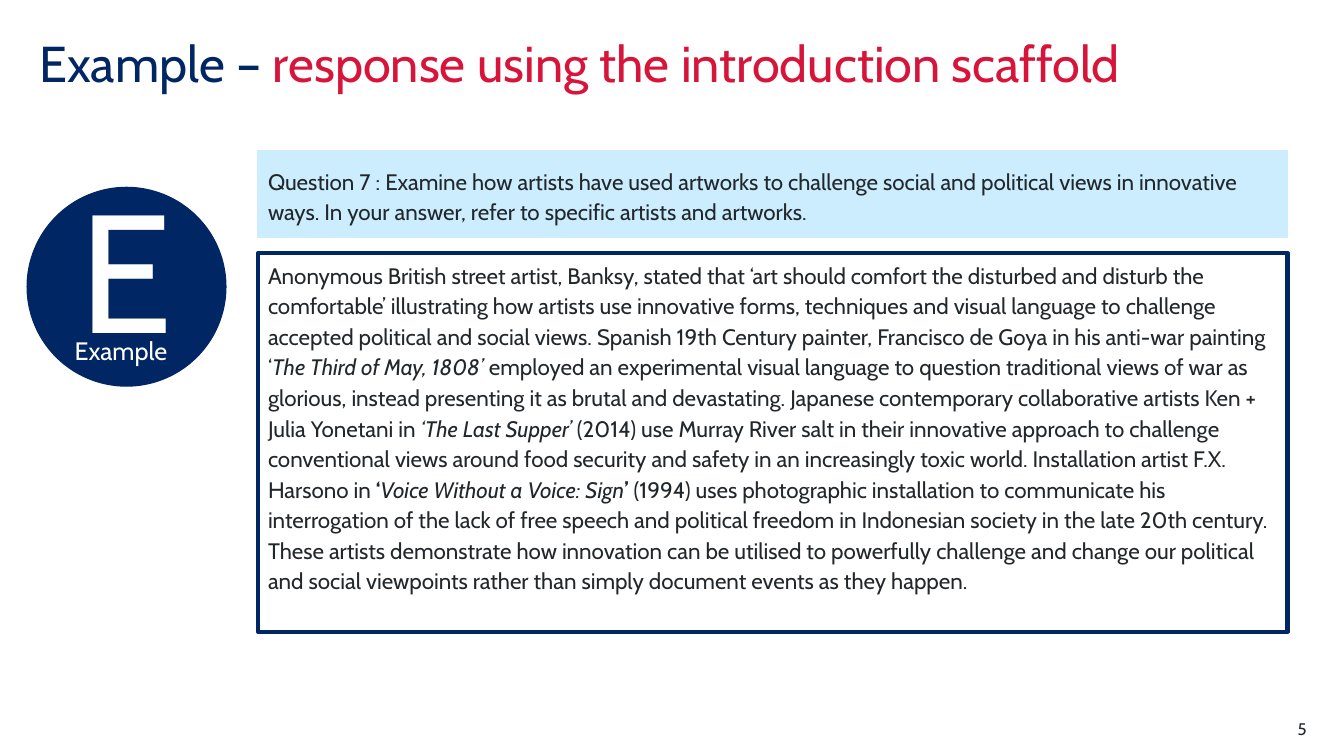
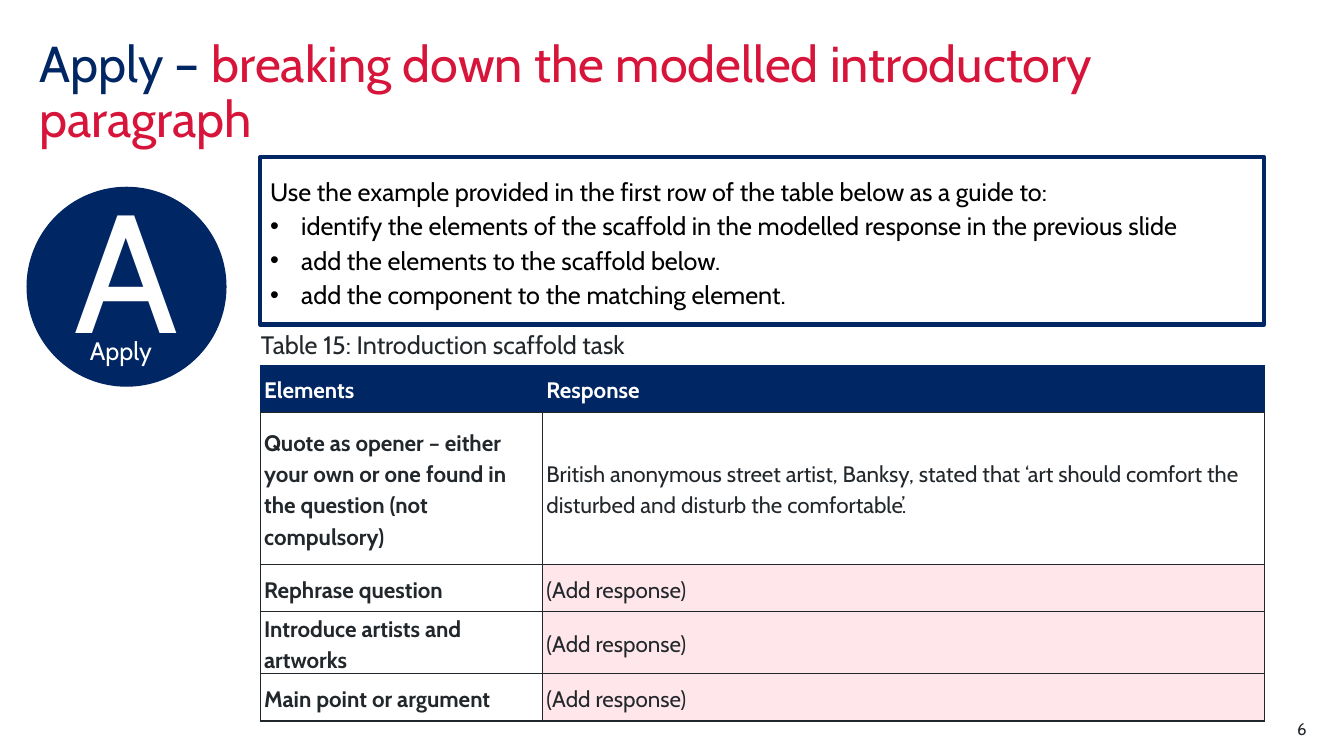
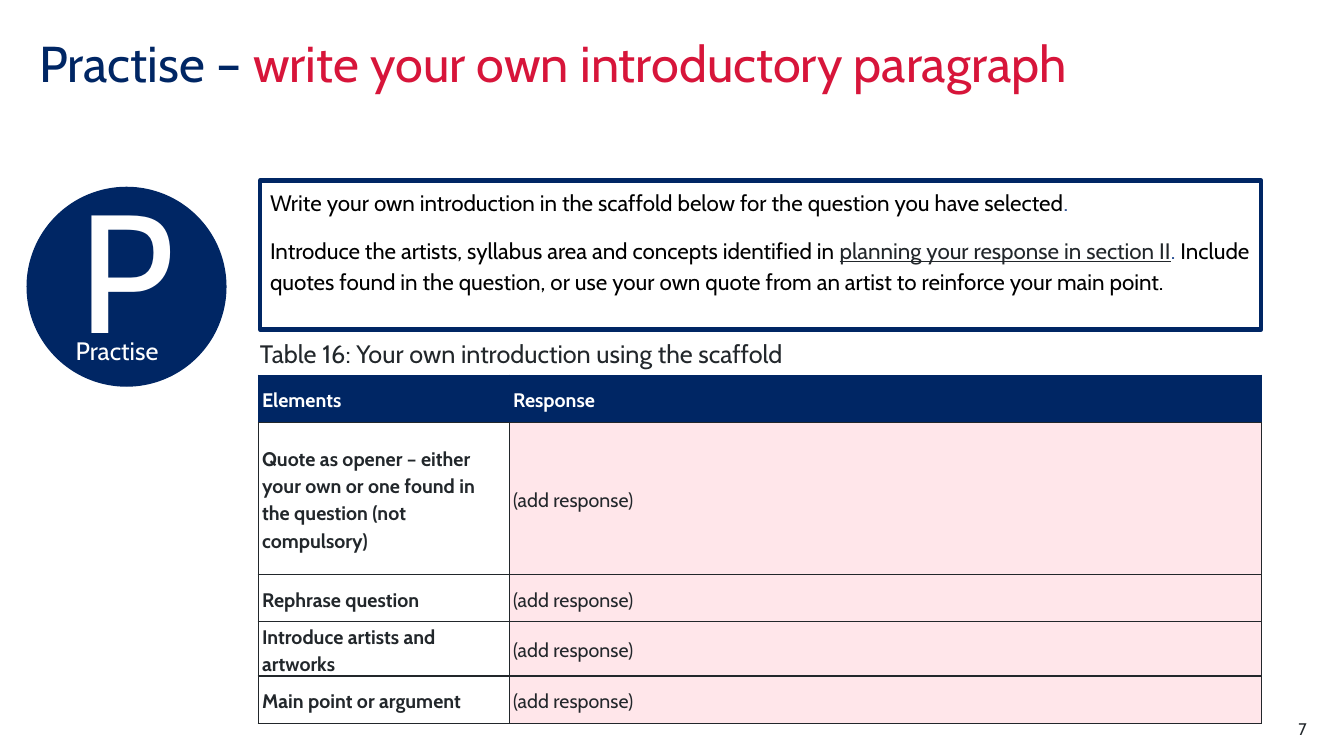
from typing import NamedTuple

from lxml import etree
from pptx import Presentation
from pptx.dml.color import RGBColor
from pptx.enum.shapes import MSO_SHAPE
from pptx.enum.text import MSO_ANCHOR, PP_ALIGN
from pptx.oxml.ns import qn
from pptx.util import Inches, Pt

OVAL, RECT = MSO_SHAPE.OVAL, MSO_SHAPE.RECTANGLE
TOP, MIDDLE = MSO_ANCHOR.TOP, MSO_ANCHOR.MIDDLE
LEFT, CENTER, RIGHT = PP_ALIGN.LEFT, PP_ALIGN.CENTER, PP_ALIGN.RIGHT

FONT = "Cabin"
COLORS = {
    "navy": "002664", "red": "D7153A", "ink": "22272B", "black": "000000",
    "white": "FFFFFF", "sky": "CBEDFD", "pink": "FFE6EA", "blue": "2F5496",
}
ITALIC, BOLD, UNDER = {"italic": True}, {"bold": True}, {"underline": True}
FLUSH = (0, 0, 0, 0)
INSET = (0.1, 0.05, 0.1, 0.05)
ROWS = (0.47, 1.51, 0.47, 0.47, 0.47)
PARTS = (
    "Quote as opener – either your own or one found in the question (not compulsory)",
    "Rephrase question",
    "Introduce artists and artworks",
    "Main point or argument",
)


class Run(NamedTuple):
    text: str
    color: str = ""
    look: dict = {}


class Para(NamedTuple):
    runs: list[Run]
    bullet: bool = False


class Style(NamedTuple):
    size: float
    color: str = "ink"
    align: PP_ALIGN = LEFT
    spacing: float = 1.0
    before: float = 0
    anchor: MSO_ANCHOR = TOP
    inset: tuple = INSET


class Box(NamedTuple):
    x: float
    y: float
    w: float
    h: float


class Panel(NamedTuple):
    box: Box
    fill: str
    line: str
    width: float
    style: Style
    paras: list[Para]


class Grid(NamedTuple):
    title: str
    label: Box
    x: float
    y: float
    cols: tuple
    size: float
    answers: list[str]
    open_from: int


class Page(NamedTuple):
    stage: str
    topic: str
    label: Box
    panels: list[Panel]
    grid: Grid | None = None


def rgb(name: str) -> RGBColor:
    return RGBColor.from_string(COLORS[name])


def plain(text: str, bullet: bool = False) -> Para:
    return Para([Run(text)], bullet)


def add_bullet(para) -> None:
    props = para._p.get_or_add_pPr()
    props.set("marL", str(Inches(0.31)))
    props.set("indent", str(-Inches(0.31)))
    etree.SubElement(props, qn("a:buFont"), typeface="Arial")
    etree.SubElement(props, qn("a:buChar"), char="•")


def write(frame, paras: list[Para], style: Style) -> None:
    """Fill a text frame, leaving its margins and anchor alone."""
    for index, item in enumerate(paras):
        para = frame.add_paragraph() if index else frame.paragraphs[0]
        if item.bullet:
            add_bullet(para)
        para.alignment = style.align
        para.line_spacing = style.spacing
        if index and style.before:
            para.space_before = Pt(style.before)
        for part in item.runs:
            run = para.add_run()
            run.text = part.text
            font = {"name": FONT, "size": Pt(style.size), **part.look}
            for key, value in font.items():
                setattr(run.font, key, value)
            run.font.color.rgb = rgb(part.color or style.color)


def set_frame(shape, paras: list[Para], style: Style) -> None:
    frame = shape.text_frame
    left, top, right, bottom = map(Inches, style.inset)
    look = {
        "word_wrap": True, "vertical_anchor": style.anchor,
        "margin_left": left, "margin_top": top,
        "margin_right": right, "margin_bottom": bottom,
    }
    for key, value in look.items():
        setattr(frame, key, value)
    write(frame, paras, style)


def add_text(slide, box: Box, paras: list[Para], style: Style) -> None:
    set_frame(slide.shapes.add_textbox(*map(Inches, box)), paras, style)


def add_panel(slide, panel: Panel, kind: MSO_SHAPE = RECT) -> None:
    shape = slide.shapes.add_shape(kind, *map(Inches, panel.box))
    shape.shadow.inherit = False
    shape.fill.solid()
    shape.fill.fore_color.rgb = rgb(panel.fill)
    shape.line.color.rgb = rgb(panel.line)
    shape.line.width = Pt(panel.width)
    set_frame(shape, panel.paras, panel.style)


def add_edge(cell, side: str, color: str, width: float) -> None:
    props = cell._tc.get_or_add_tcPr()
    line = etree.SubElement(props, qn(f"a:ln{side}"), w=str(Pt(width)))
    fill = etree.SubElement(line, qn("a:solidFill"))
    etree.SubElement(fill, qn("a:srgbClr"), val=COLORS[color])


def add_grid(slide, grid: Grid) -> None:
    """Draw the scaffold table with its caption."""
    add_text(slide, grid.label, [plain(grid.title)], Style(18))
    spot = Box(grid.x, grid.y, sum(grid.cols), sum(ROWS))
    table = slide.shapes.add_table(len(ROWS), 2, *map(Inches, spot)).table
    table.horz_banding = False
    for col, width in zip(table.columns, grid.cols):
        col.width = Inches(width)
    for row, height in zip(table.rows, ROWS):
        row.height = Inches(height)
    lines = [("Elements", "Response"), *zip(PARTS, grid.answers)]
    for r, line in enumerate(lines):
        for c, text in enumerate(line):
            cell = table.cell(r, c)
            head = r == 0
            for side in "LRTB":
                edge = ("navy", 0.5) if head and side != "B" else ("ink", 1)
                add_edge(cell, side, *edge)
            cell.fill.solid()
            blank = c == 1 and r >= grid.open_from
            fill = "navy" if head else "pink" if blank else "white"
            cell.fill.fore_color.rgb = rgb(fill)
            cell.vertical_anchor = MIDDLE
            cell.margin_left = cell.margin_right = Inches(0.04)
            cell.margin_top = cell.margin_bottom = 0
            style = Style(grid.size, "white" if head else "ink", spacing=1.15)
            look = BOLD if head or c == 0 else {"bold": False}
            write(cell.text_frame, [Para([Run(text, look=look)])], style)


def add_page(deck, page: Page, number: int) -> None:
    slide = deck.slides.add_slide(deck.slide_layouts[6])
    title = Para([Run(f"{page.stage} – "), Run(page.topic, "red")])
    add_text(slide, Box(0.39, 0.39, 11.02, 1.1), [title],
             Style(36, "navy", spacing=0.9, inset=FLUSH))
    badge = Style(120, "white", CENTER, anchor=MIDDLE, inset=(0.1, 0.05, 0.1, 0.45))
    add_panel(slide, Panel(Box(0.27, 1.86, 1.97, 1.97), "navy", "navy", 1,
                           badge, [plain(page.stage[0])]), OVAL)
    add_text(slide, page.label, [plain(page.stage)], Style(18, "white", inset=FLUSH))
    for panel in page.panels:
        add_panel(slide, panel)
    if page.grid:
        add_grid(slide, page.grid)
    add_text(slide, Box(12.17, 7.13, 0.79, 0.2), [plain(str(number))],
             Style(12, align=RIGHT, inset=FLUSH))


QUESTION = (
    "Question 7 : Examine how artists have used artworks to challenge social and "
    "political views in innovative ways. In your answer, refer to specific artists "
    "and artworks."
)
ESSAY = Para([
    Run("Anonymous British street artist, Banksy, stated that ‘art should comfort the "
        "disturbed and disturb the comfortable’ illustrating how artists use innovative "
        "forms, techniques and visual language to challenge accepted political and social "
        "views. Spanish 19th Century painter, Francisco de Goya in his anti-war painting ‘"),
    Run("The Third of May, 1808’ ", look=ITALIC),
    Run("employed an experimental visual language to question traditional views of war as "
        "glorious, instead presenting it as brutal and devastating. Japanese contemporary "
        "collaborative artists Ken + Julia Yonetani in "),
    Run("‘The Last Supper’", look=ITALIC),
    Run(" (2014) use Murray River salt in their innovative approach to challenge "
        "conventional views around food security and safety in an increasingly toxic world. "
        "Installation artist F.X. Harsono in "),
    Run("‘", look=BOLD),
    Run("Voice Without a Voice: Sign", look=ITALIC),
    Run("’", look=BOLD),
    Run(" (1994) uses photographic installation to communicate his interrogation of the "
        "lack of free speech and political freedom in Indonesian society in the late 20th "
        "century. These artists demonstrate how innovation can be utilised to powerfully "
        "challenge and change our political and social viewpoints rather than simply "
        "document events as they happen."),
])
STEPS = [
    plain("Use the example provided in the first row of the table below as a guide to:"),
    plain("identify the elements of the scaffold in the modelled response in the "
          "previous slide", True),
    plain("add the elements to the scaffold below.", True),
    plain("add the component to the matching element.", True),
]
TASK = [
    Para([
        Run("Write your own introduction in the scaffold below for the question you "
            "have selected"),
        Run(".", "blue"),
    ]),
    Para([
        Run("Introduce the artists, syllabus area and concepts identified in "),
        Run("planning your response in section II", "ink", UNDER),
        Run(".", "blue"),
        Run(" Include quotes found in the question, or use your own quote from an "
            "artist to reinforce your main point."),
    ]),
]
QUOTE = (
    "British anonymous street artist, Banksy, stated that ‘art should comfort the "
    "disturbed and disturb the comfortable’."
)

PAGES = [
    Page("Example", "response using the introduction scaffold",
         Box(0.74, 3.33, 1.03, 0.48), [
             Panel(Box(2.56, 1.5, 10.21, 0.86), "sky", "sky", 1,
                   Style(16, spacing=1.14, anchor=MIDDLE), [plain(QUESTION)]),
             Panel(Box(2.56, 2.51, 10.21, 3.76), "white", "navy", 3,
                   Style(16, spacing=1.14), [ESSAY]),
         ]),
    Page("Apply", "breaking down the modelled introductory paragraph",
         Box(0.89, 3.33, 0.72, 0.48), [
             Panel(Box(2.58, 1.56, 9.96, 1.66), "white", "navy", 3,
                   Style(18, "black", spacing=1.14, anchor=MIDDLE), STEPS),
         ],
         Grid("Table 15: Introduction scaffold task", Box(2.49, 3.22, 8.14, 0.4),
              2.58, 3.62, (2.8, 7.16), 16, [QUOTE] + ["(Add response)"] * 3, 2)),
    Page("Practise", "write your own introductory paragraph",
         Box(0.75, 3.33, 1, 0.48), [
             Panel(Box(2.58, 1.79, 9.93, 1.48), "white", "navy", 3,
                   Style(16, "black", spacing=1.15, before=12), TASK),
         ],
         Grid("Table 16: Your own introduction using the scaffold",
              Box(2.48, 3.31, 8.14, 0.4),
              2.56, 3.72, (2.49, 7.46), 14, ["(add response)"] * 4, 1)),
]


def main() -> None:
    deck = Presentation()
    deck.slide_width, deck.slide_height = Inches(13.33), Inches(7.5)
    for number, page in enumerate(PAGES, start=5):
        add_page(deck, page, number)
    deck.save("out.pptx")


if __name__ == "__main__":
    main()
